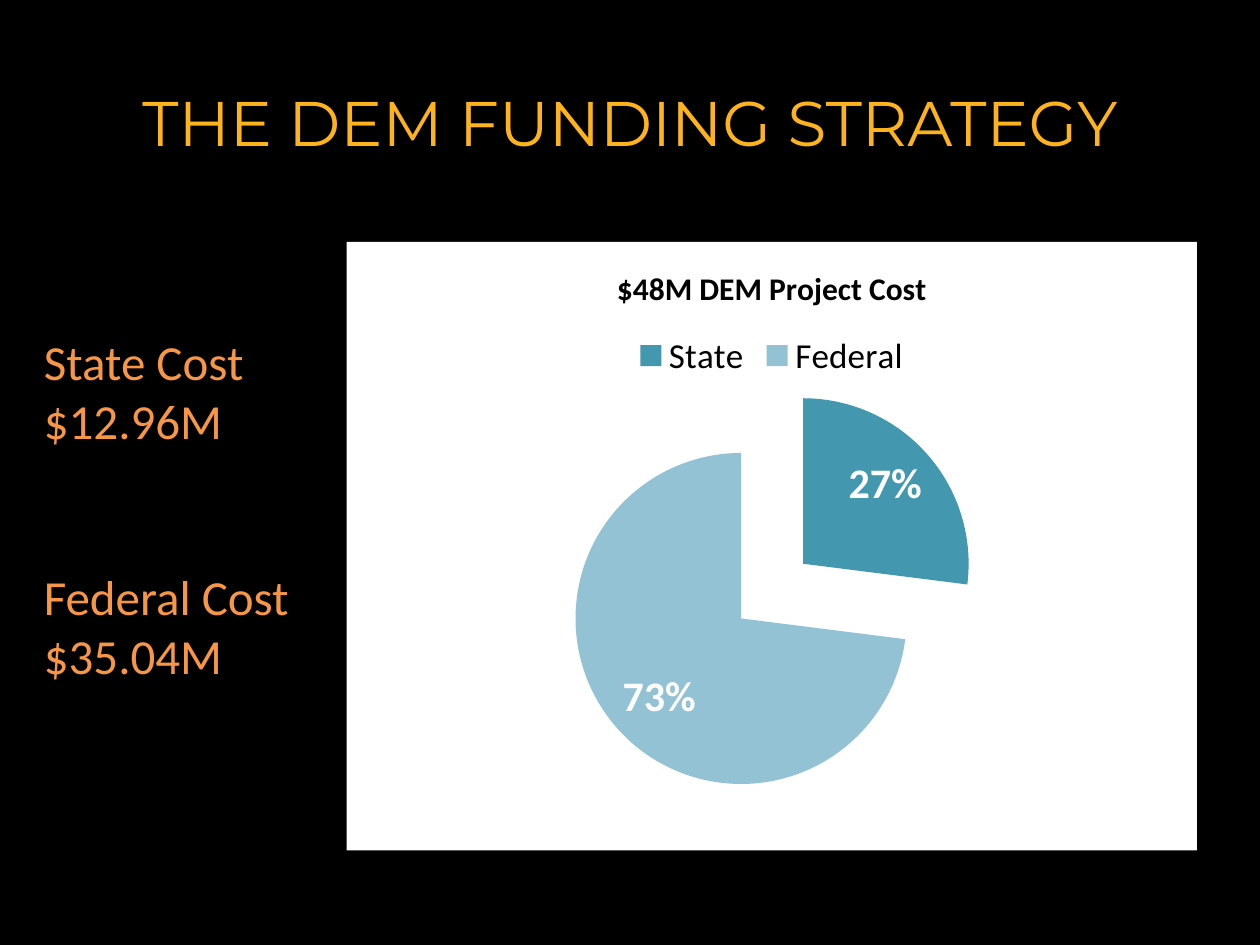
from lxml import etree
from pptx import Presentation
from pptx.chart.data import CategoryChartData
from pptx.dml.color import RGBColor
from pptx.enum.chart import XL_CHART_TYPE as ChartType
from pptx.enum.chart import XL_LABEL_POSITION as LabelPosition
from pptx.enum.chart import XL_LEGEND_POSITION as LegendPosition
from pptx.enum.text import MSO_ANCHOR as Anchor
from pptx.enum.text import MSO_AUTO_SIZE as AutoSize
from pptx.enum.text import PP_ALIGN as Align
from pptx.oxml import parse_xml
from pptx.oxml.ns import nsdecls, qn
from pptx.util import Inches, Pt

COSTS = [("State Cost", "$12.96M"), ("Federal Cost", "$35.04M")]
SHARES = {"State": 27, "Federal": 73}
SLICE_COLORS = ["4398B0", "92C2D4"]
PLOT_LAYOUT = {"x": 0.085, "y": 0.234, "w": 0.831, "h": 0.68}


def color(value):
    """Return the colour for a hex string."""
    return RGBColor.from_string(value)


def style_font(font, fill, **values):
    """Set the colour and the given format values of a font."""
    for name, value in values.items():
        setattr(font, name, value)
    font.color.rgb = color(fill)


def place_title(page, box, text):
    """Move, fill and format the title placeholder."""
    title = page.shapes.title
    for name, value in zip(("left", "top", "width", "height"), box):
        setattr(title, name, Inches(value))
    title.text_frame.vertical_anchor = Anchor.MIDDLE
    para = title.text_frame.paragraphs[0]
    para.alignment = Align.CENTER
    span = para.add_run()
    span.text = text
    style_font(span.font, "FCB31D", name="Montserrat", size=Pt(36))


def place_costs(page, box, costs):
    """Write each cost as a label with its amount below."""
    frame = page.shapes.add_textbox(*map(Inches, box)).text_frame
    frame.word_wrap = True
    frame.auto_size = AutoSize.SHAPE_TO_FIT_TEXT
    for index, cost in enumerate(costs):
        for line, text in enumerate(cost):
            first = index == line == 0
            para = frame.paragraphs[0] if first else frame.add_paragraph()
            if index and not line:
                para.space_before = Pt(67)
            span = para.add_run()
            span.text = text
            style_font(span.font, "F79646", name="Calibri", size=Pt(28))


def set_chart_area(chart, fill):
    """Fill the chart area and fix the inner plot area."""
    area = parse_xml(
        f'<c:spPr {nsdecls("c", "a")}><a:solidFill><a:srgbClr val="{fill}"/>'
        "</a:solidFill><a:ln><a:noFill/></a:ln></c:spPr>"
    )
    chart.element.find(qn("c:chart")).addnext(area)
    plot_area = chart.element.find(".//" + qn("c:plotArea"))
    for old in plot_area.findall(qn("c:layout")):
        plot_area.remove(old)
    layout = etree.Element(qn("c:layout"))
    manual = etree.SubElement(layout, qn("c:manualLayout"))
    settings = {"layoutTarget": "inner", "xMode": "edge", "yMode": "edge"}
    for name, value in (settings | PLOT_LAYOUT).items():
        etree.SubElement(manual, qn(f"c:{name}")).set("val", str(value))
    plot_area.insert(0, layout)


def style_slices(series, colors, explosion):
    """Colour the slices and pull them apart."""
    for index, value in enumerate(colors):
        fill = series.points[index].format.fill
        fill.solid()
        fill.fore_color.rgb = color(value)
    pull = etree.Element(qn("c:explosion"))
    pull.set("val", str(explosion))
    series.points[0].format
    series._element.find(qn("c:dPt")).addprevious(pull)


def place_chart(page, box, title, shares):
    """Add the pie chart of cost shares."""
    data = CategoryChartData()
    data.categories = list(shares)
    data.add_series("Series 1", list(shares.values()))
    chart = page.shapes.add_chart(ChartType.PIE, *map(Inches, box), data).chart
    style_font(chart.font, "000000", name="Calibri", size=Pt(10))
    set_chart_area(chart, "FFFFFF")

    chart.has_title = True
    para = chart.chart_title.text_frame.paragraphs[0]
    span = para.add_run()
    span.text = title
    style_font(span.font, "000000", name="Calibri", size=Pt(18), bold=True)

    chart.has_legend = True
    chart.legend.position = LegendPosition.TOP
    chart.legend.include_in_layout = False
    style_font(chart.legend.font, "000000", name="Calibri", size=Pt(20))

    plot = chart.plots[0]
    plot.vary_by_categories = True
    style_slices(plot.series[0], SLICE_COLORS, 25)
    labels = plot.series[0].data_labels
    label_format = {
        "show_percentage": True,
        "show_value": False,
        "number_format": "0%",
        "number_format_is_linked": False,
        "position": LabelPosition.INSIDE_END,
    }
    for name, value in label_format.items():
        setattr(labels, name, value)
    style_font(labels.font, "FFFFFF", name="Calibri", size=Pt(24), bold=True)


def main():
    """Build the funding slide and save the deck."""
    deck = Presentation()
    deck.slide_width, deck.slide_height = Inches(10), Inches(7.5)
    page = deck.slides.add_slide(deck.slide_layouts[5])
    page.background.fill.solid()
    page.background.fill.fore_color.rgb = color("000000")
    place_chart(page, (2.75, 1.92, 6.75, 4.83), "$48M DEM Project Cost", SHARES)
    place_costs(page, (0.25, 2.58, 2.75, 2.93), COSTS)
    place_title(page, (0.5, 0, 9, 1.92), "THE DEM FUNDING STRATEGY")
    deck.save("out.pptx")


if __name__ == "__main__":
    main()
